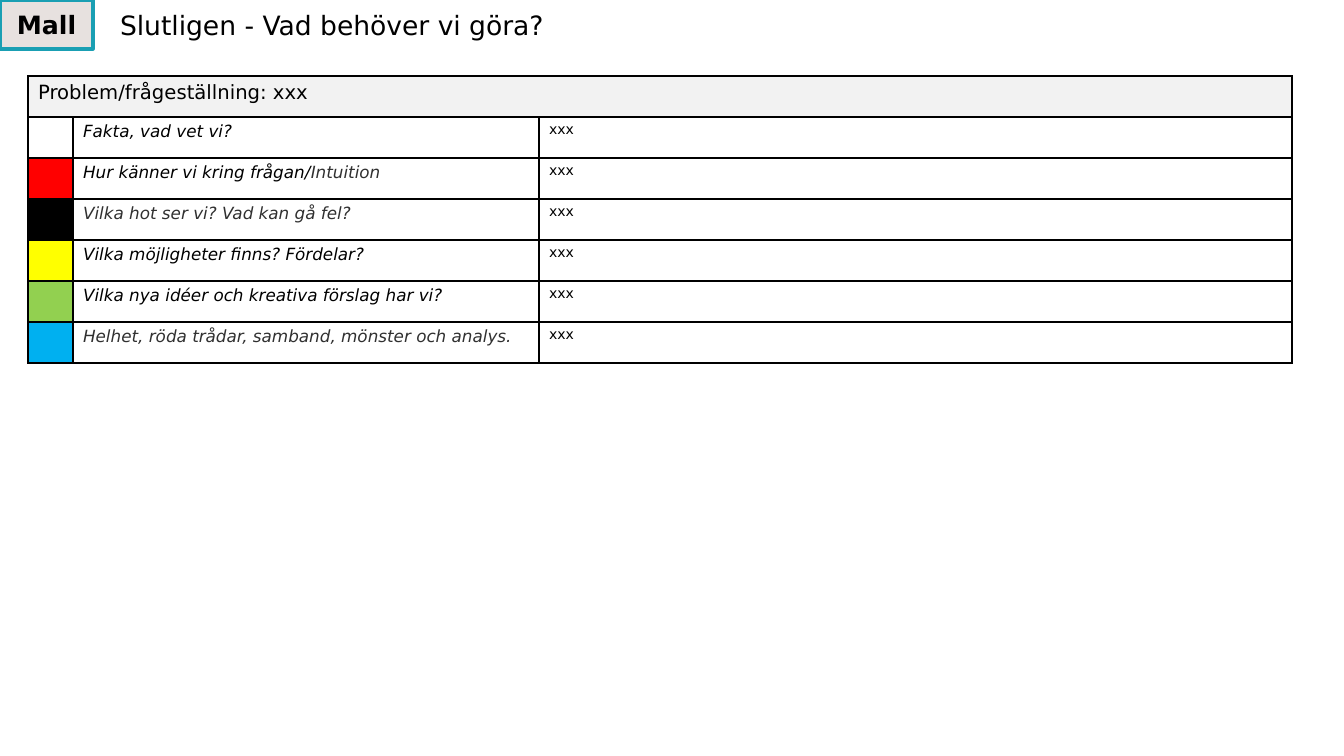
from lxml import etree
from pptx import Presentation
from pptx import util as u
from pptx.dml.color import RGBColor
from pptx.enum import shapes, text
from pptx.oxml import ns

PX = 914400 / 100.8
FONT = "DejaVu Sans"
COLORS = {
    "white": "FFFFFF", "black": "000000", "dark": "303030", "header": "F2F2F2",
    "badge": "E7E1DF", "teal": "1A9FB3", "red": "FF0000", "yellow": "FFFF00",
    "green": "92D050", "blue": "00B0F0",
}
HATS = [
    ("white", [("Fakta, vad vet vi?", "black")]),
    ("red", [("Hur känner vi kring frågan/", "black"), ("Intuition", "dark")]),
    ("black", [("Vilka hot ser vi? Vad kan gå fel?", "dark")]),
    ("yellow", [("Vilka möjligheter finns? Fördelar?", "black")]),
    ("green", [("Vilka nya idéer och kreativa förslag har vi?", "black")]),
    ("blue", [("Helhet, röda trådar, samband, mönster och analys.", "dark")]),
]
COLUMNS = [45, 466, 753]
ROW = 41


def px(*lengths):
    return [u.Emu(round(length * PX)) for length in lengths]


def write(frame, spans, size, bold=False, italic=False):
    para = frame.paragraphs[0]
    for words, color in spans:
        span = para.add_run()
        span.text = words
        span.font.name = FONT
        span.font.size = u.Pt(size)
        span.font.bold = bold
        span.font.italic = italic
        span.font.color.rgb = RGBColor.from_string(COLORS[color])
    return para


deck = Presentation()
deck.slide_width, deck.slide_height = px(1344, 756)
page = deck.slides.add_slide(deck.slide_layouts[5])

badge = page.shapes.add_shape(shapes.MSO_SHAPE.RECTANGLE, *px(0, 0, 93, 49))
badge.shadow.inherit = False
badge.fill.solid()
badge.fill.fore_color.rgb = RGBColor.from_string(COLORS["badge"])
badge.line.color.rgb = RGBColor.from_string(COLORS["teal"])
badge.line.width = u.Pt(2.25)
badge.text_frame.vertical_anchor = text.MSO_ANCHOR.MIDDLE
write(badge.text_frame, [("Mall", "black")], 18, bold=True).alignment = text.PP_ALIGN.CENTER

title = page.shapes.title
title.left, title.top, title.width, title.height = px(110, -17, 873, 83)
frame = title.text_frame
frame.word_wrap = True
frame.auto_size = text.MSO_AUTO_SIZE.NONE
frame.vertical_anchor = text.MSO_ANCHOR.MIDDLE
frame.margin_left, frame.margin_right = px(10, 10)
frame.margin_top = frame.margin_bottom = 0
heading = write(frame, [("Slutligen - Vad behöver vi göra?", "black")], 19)
heading.alignment = text.PP_ALIGN.LEFT

rows = len(HATS) + 1
table = page.shapes.add_table(
    rows, len(COLUMNS), *px(28, 76, sum(COLUMNS), ROW * rows)).table
table.first_row = False
table.horz_banding = False
for column, width in zip(table.columns, px(*COLUMNS)):
    column.width = width
for row in table.rows:
    row.height = px(ROW)[0]

for cell in table.iter_cells():
    properties = cell._tc.get_or_add_tcPr()
    for side in ("a:lnL", "a:lnR", "a:lnT", "a:lnB"):
        border = etree.SubElement(properties, ns.qn(side), w=str(u.Pt(1)))
        fill = etree.SubElement(border, ns.qn("a:solidFill"))
        etree.SubElement(fill, ns.qn("a:srgbClr"), val=COLORS["black"])
    cell.fill.solid()
    cell.fill.fore_color.rgb = RGBColor.from_string(COLORS["white"])

header = table.cell(0, 0)
header.merge(table.cell(0, 2))
header.fill.fore_color.rgb = RGBColor.from_string(COLORS["header"])
write(header.text_frame, [("Problem/frågeställning: xxx", "black")], 14)

for index, (hat, question) in enumerate(HATS, 1):
    table.cell(index, 0).fill.fore_color.rgb = RGBColor.from_string(COLORS[hat])
    write(table.cell(index, 1).text_frame, question, 12, italic=True)
    write(table.cell(index, 2).text_frame, [("xxx", "black")], 10)

deck.save("out.pptx")
